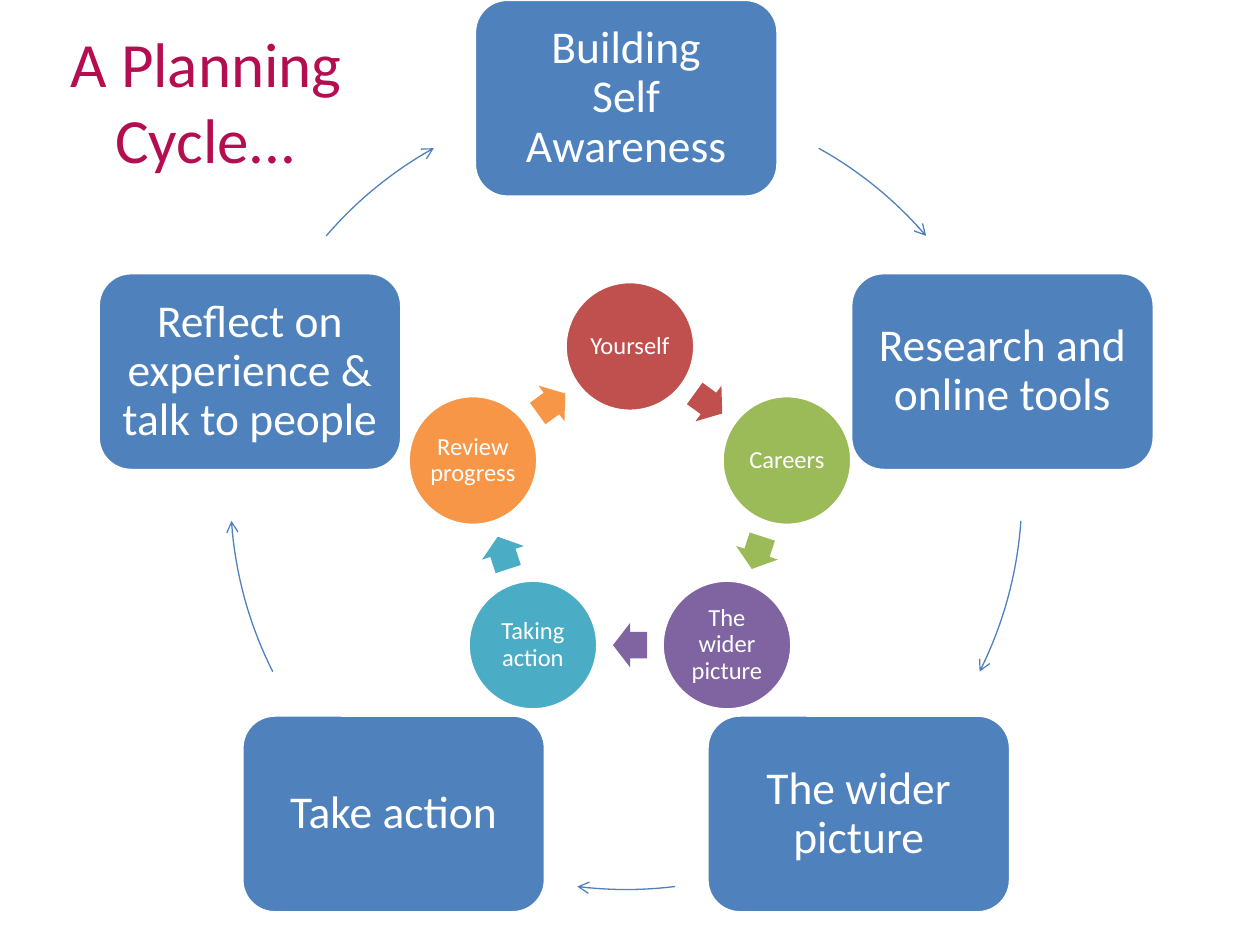
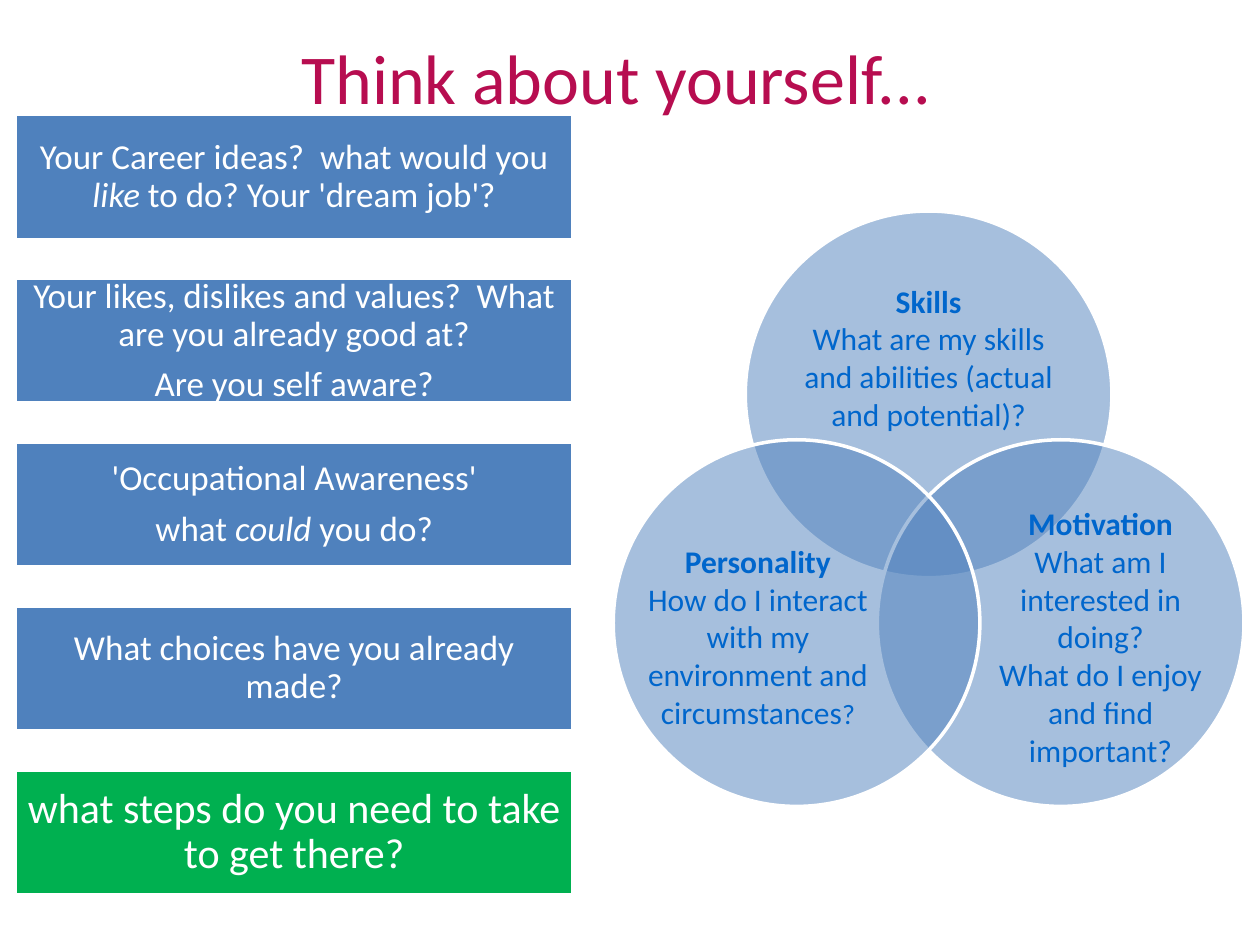
import math
from dataclasses import dataclass
from typing import NamedTuple

import lxml.etree
import pptx
import pptx.dml.color
import pptx.enum.shapes
import pptx.enum.text
import pptx.oxml.ns
import pptx.util

Inches = pptx.util.Inches
Kind = pptx.enum.shapes.MSO_SHAPE
Anchor = pptx.enum.text.MSO_ANCHOR
qn = pptx.oxml.ns.qn


# Colours, font and type sizes
@dataclass(frozen=True)
class Theme:
    font: str = "Calibri"
    white: str = "FFFFFF"
    blue: str = "4F81BD"
    green: str = "00B050"
    ink: str = "0066CC"
    rose: str = "B40D50"
    berry: str = "B70D50"
    title: float = 36
    wide: float = 40
    step: float = 26
    last: float = 24
    bar: float = 20
    venn: float = 18
    note: float = 16
    ball: float = 14
    edge: float = 2
    thin: float = 0.75


THEME = Theme()


class Span(NamedTuple):
    text: str
    bold: bool = False
    slant: bool = False
    size: float | None = None


class Box(NamedTuple):
    left: float
    top: float
    width: float
    height: float


@dataclass(frozen=True)
class Ring:
    """A circle on which parts sit, with angles clockwise from the top."""
    x: float
    y: float
    radius: float

    def point(self, angle: float, scale: float = 1) -> tuple[float, float]:
        turn = math.radians(angle)
        reach = self.radius * scale
        return self.x + reach * math.sin(turn), self.y - reach * math.cos(turn)

    def box(self, angle: float, width: float, height: float, scale: float = 1) -> Box:
        x, y = self.point(angle, scale)
        return Box(x - width / 2, y - height / 2, width, height)


@dataclass(frozen=True)
class Step:
    text: str
    start: float  # angles of the arc that leaves this step
    end: float


@dataclass(frozen=True)
class Ball:
    text: str
    fill: str


@dataclass(frozen=True)
class Bar:
    lines: list
    fill: str = THEME.blue
    size: float = THEME.bar
    inset: float = 0.08


@dataclass(frozen=True)
class Lobe:
    lines: list
    area: Box


# Content
OUTER = Ring(4.97, 3.92, 3.14)
STEPS = [
    Step("Building\vSelf Awareness", 29.1, 49.3),
    Step("Research and online tools", 93.9, 116.7),
    Step("The wider picture", 172.9, 187.1),
    Step("Take action", 243.3, 266.1),
    Step("Reflect on experience & talk to people", 310.7, 330.9),
]
INNER = Ring(5, 4.06, 1.31)
BALLS = [
    Ball("Yourself", "C0504D"),
    Ball("Careers", "9BBB59"),
    Ball("The wider picture", "8064A2"),
    Ball("Taking action", "4BACC6"),
    Ball("Review progress", "F79646"),
]
BARS = [
    Bar([[Span("Your Career ideas?  what would you "), Span("like", slant=True),
          Span(" to do? Your 'dream job'?")]]),
    Bar(["Your likes, dislikes and values?  What are you already good at?",
         "Are you self aware?"]),
    Bar(["'Occupational Awareness'",
         [Span("what "), Span("could", slant=True), Span(" you do?")]]),
    Bar(["What choices have you already made?"]),
    Bar(["what steps do you need to take to get there?"],
        THEME.green, THEME.last, 0.1),
]
VENN = Ring(7.37, 4.34, 1.21)
LOBES = [
    Lobe([[Span("Skills", bold=True)],
          "What are my skills and abilities (actual and potential)?"],
         Box(6.3, 2.18, 2.14, 1.31)),
    Lobe([[Span("Motivation", bold=True)], "What am I interested in doing?",
          "What do I enjoy and find important?"],
         Box(7.86, 4.25, 1.75, 1.6)),
    Lobe([[Span("Personality", bold=True)],
          [Span("How do I interact with my environment and circumstances"),
           Span("?", size=THEME.note)]],
         Box(5.14, 4.25, 1.75, 1.6)),
]


# Drawing helpers
def tint(text: str):
    return pptx.dml.color.RGBColor.from_string(text)


def place(box: Box) -> list:
    return [Inches(side) for side in box]


def write(shape, lines: list, *, size: float, color: str = THEME.white,
          inset: float = 0, lead: float | None = None, after: float = 0,
          anchor=Anchor.MIDDLE) -> None:
    frame = shape.text_frame
    frame.word_wrap = True
    frame.auto_size = pptx.enum.text.MSO_AUTO_SIZE.NONE
    frame.vertical_anchor = anchor
    frame.margin_left = frame.margin_right = Inches(inset)
    frame.margin_top = frame.margin_bottom = Inches(inset)
    for spot, line in enumerate(lines):
        para = frame.add_paragraph() if spot else frame.paragraphs[0]
        para.alignment = pptx.enum.text.PP_ALIGN.CENTER
        para.line_spacing = lead
        para.space_after = pptx.util.Pt(round(size * after, 1))
        for span in [Span(line)] if isinstance(line, str) else line:
            for part, piece in enumerate(span.text.split("\v")):
                if part:
                    para.add_line_break()
                run = para.add_run()
                run.text = piece
                run.font.name = THEME.font
                run.font.size = pptx.util.Pt(span.size or size)
                run.font.bold = span.bold
                run.font.italic = span.slant
                run.font.color.rgb = tint(color)


def draw(slide, kind, box: Box, fill: str, *, edge: bool = True,
         alpha: int | None = None):
    shape = slide.shapes.add_shape(kind, *place(box))
    shape.shadow.inherit = False
    shape.fill.solid()
    shape.fill.fore_color.rgb = tint(fill)
    if alpha is not None:
        color = shape.fill._xPr.find(".//" + qn("a:srgbClr"))
        lxml.etree.SubElement(color, qn("a:alpha"), val=str(alpha * 1000))
    if edge:
        shape.line.color.rgb = tint(THEME.white)
        shape.line.width = pptx.util.Pt(THEME.edge)
    else:
        shape.line.fill.background()
    return shape


def arc(slide, ring: Ring, start: float, end: float, count: int = 16) -> None:
    dots = []
    for spot in range(count + 1):
        x, y = ring.point(start + (end - start) * spot / count)
        dots.append((Inches(x), Inches(y)))
    form = slide.shapes.build_freeform(*dots[0])
    form.add_line_segments(dots[1:], close=False)
    shape = form.convert_to_shape()
    shape.shadow.inherit = False
    shape.fill.background()
    shape.line.color.rgb = tint(THEME.blue)
    shape.line.width = pptx.util.Pt(THEME.thin)
    lxml.etree.SubElement(shape.line._get_or_add_ln(), qn("a:tailEnd"), type="arrow")


def start(deck, text: str, box: Box, **format):
    slide = deck.slides.add_slide(deck.slide_layouts[5])
    title = slide.shapes.title
    title.left, title.top, title.width, title.height = place(box)
    write(title, [text], inset=0.05, **format)
    return slide


# Slides
def cycle(deck) -> None:
    slide = start(deck, "A Planning Cycle...", Box(0, 0.13, 3.27, 1.33),
                  size=THEME.title, color=THEME.rose)
    # Outer steps and arcs
    gap = 360 / len(STEPS)
    for spot, step in enumerate(STEPS):
        shape = draw(slide, Kind.ROUNDED_RECTANGLE,
                     OUTER.box(spot * gap, 2.41, 1.57), THEME.blue)
        write(shape, [step.text], size=THEME.step, inset=0.11, lead=0.9, after=0.35)
        arc(slide, OUTER, step.start, step.end)
    # Inner balls, with arrows halfway between them
    gap = 360 / len(BALLS)
    for spot, ball in enumerate(BALLS):
        shape = draw(slide, Kind.OVAL, INNER.box(spot * gap, 1.03, 1.03), ball.fill)
        write(shape, [ball.text], size=THEME.ball, inset=0.02, lead=0.9, after=0.35)
        half = (spot + 0.5) * gap
        scale = math.cos(math.radians(gap / 2))
        arrow = draw(slide, Kind.RIGHT_ARROW, INNER.box(half, 0.27, 0.35, scale),
                     ball.fill, edge=False)
        arrow.adjustments[0] = 0.6
        arrow.adjustments[1] = 0.5
        arrow.rotation = half


def think(deck) -> None:
    slide = start(deck, "Think about yourself...", Box(0.64, 0.22, 8.5, 0.59),
                  size=THEME.wide, color=THEME.berry, anchor=Anchor.TOP)
    # Venn circles
    for spot, lobe in enumerate(LOBES):
        draw(slide, Kind.OVAL, VENN.box(spot * 360 / len(LOBES), 2.91, 2.91),
             THEME.blue, alpha=50)
        label = slide.shapes.add_textbox(*place(lobe.area))
        write(label, lobe.lines, size=THEME.venn, color=THEME.ink)
    # Question bars
    for spot, bar in enumerate(BARS):
        shape = draw(slide, Kind.RECTANGLE,
                     Box(0.12, 0.91 + spot * 1.3, 4.43, 0.99), bar.fill)
        write(shape, bar.lines, size=bar.size, inset=bar.inset, lead=0.9, after=0.35)


def main() -> None:
    deck = pptx.Presentation()
    deck.slide_width, deck.slide_height = Inches(10), Inches(7.5)
    cycle(deck)
    think(deck)
    deck.save("out.pptx")


if __name__ == "__main__":
    main()
